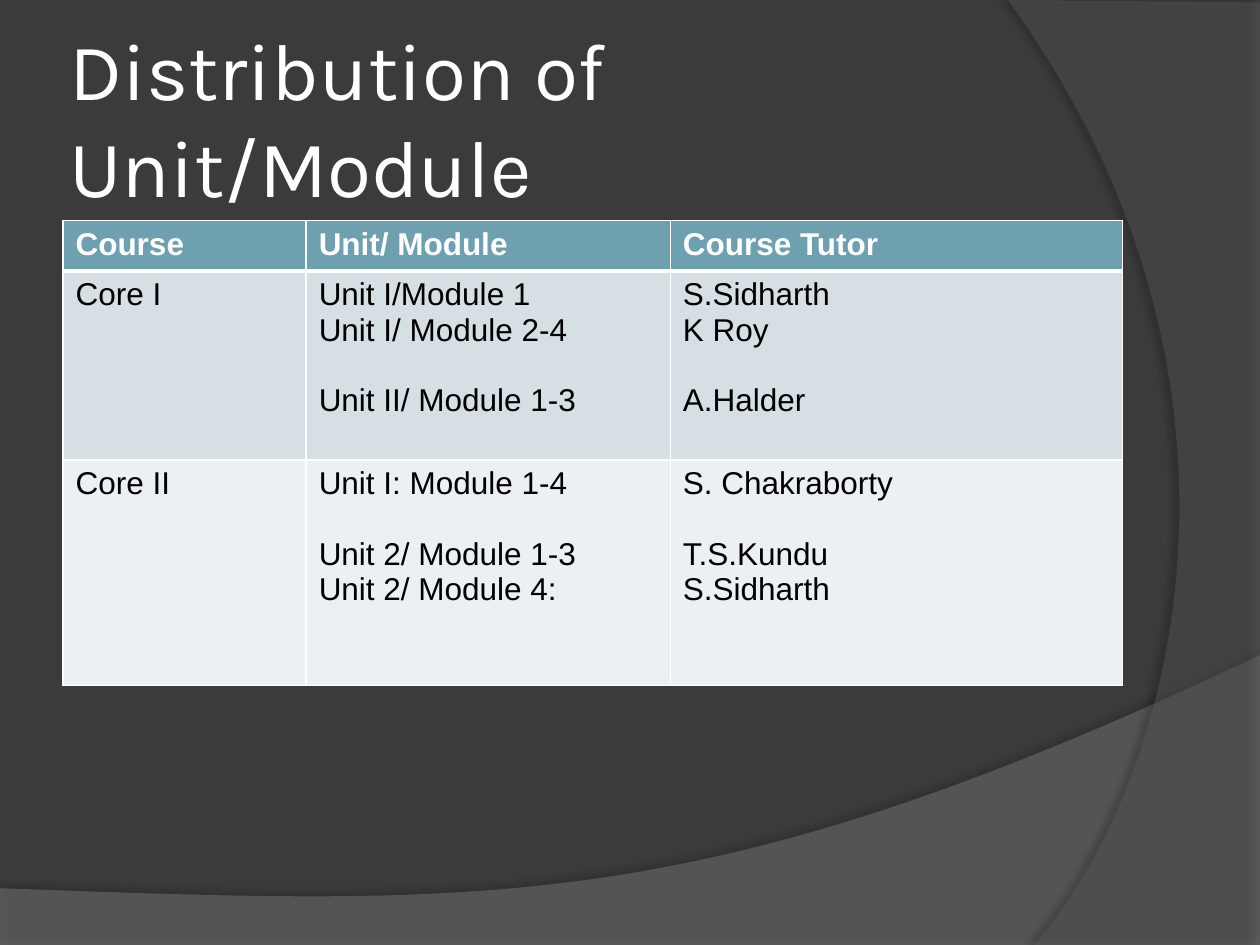
from lxml.etree import SubElement
from pptx import Presentation
from pptx.dml.color import RGBColor
from pptx.enum.text import MSO_ANCHOR
from pptx.oxml.ns import qn
from pptx.util import Inches, Pt

HEADS = ["Course", "Unit/ Module", "Course Tutor"]
# Each cell is a list of groups; a line of space parts the groups.
ROWS = [
    [[["Core I"]],
     [["Unit I/Module 1", "Unit I/ Module 2-4"], ["Unit II/ Module 1-3"]],
     [["S.Sidharth", "K Roy"], ["A.Halder"]]],
    [[["Core II"]],
     [["Unit I: Module 1-4"], ["Unit 2/ Module 1-3", "Unit 2/ Module 4:"]],
     [["S. Chakraborty"], ["T.S.Kundu", "S.Sidharth"]]],
]
HEAD = {"name": "Arial", "size": Pt(18), "bold": True, "color": "FFFFFF"}
BODY = HEAD | {"bold": False, "color": "000000"}
TITLE = {"name": "Karla", "size": Pt(46), "color": "FFFFFF"}


def rgb(code):
    return RGBColor.from_string(code)


def curve(*pts, steps=60):
    """Points along a cubic Bezier curve given by its four control points."""
    out = []
    for i in range(steps + 1):
        t = i / steps
        parts = ((1 - t) ** 3, 3 * t * (1 - t) ** 2, 3 * t * t * (1 - t), t ** 3)
        out.append(tuple(sum(w * p[k] for w, p in zip(parts, pts)) for k in (0, 1)))
    return out


def tint(node, code, alpha):
    color = SubElement(node, qn("a:srgbClr"), val=code)
    SubElement(color, qn("a:alpha"), val=str(alpha * 1000))


class Page:
    def __init__(self, deck, back):
        self.slide = deck.slides.add_slide(deck.slide_layouts[6])
        fill = self.slide.background.fill
        fill.solid()
        fill.fore_color.rgb = rgb(back)

    def style(self, run, form):
        for key, val in form.items():
            if key == "color":
                run.font.color.rgb = rgb(val)
            else:
                setattr(run.font, key, val)

    def wave(self, pts, code, alpha, shade, dist, angle):
        """Draw a translucent outline with a soft shadow."""
        pts = [(Inches(x), Inches(y)) for x, y in pts]
        pen = self.slide.shapes.build_freeform(*pts[0])
        pen.add_line_segments(pts[1:], close=True)
        shape = pen.convert_to_shape()
        shape.line.fill.background()
        shape.shadow.inherit = False
        shape.fill.solid()
        shape.fill.fore_color.rgb = rgb(code)
        props = shape.element.spPr
        color = props.find(qn("a:solidFill"))[0]
        SubElement(color, qn("a:alpha"), val=str(alpha * 1000))
        glow = SubElement(props.find(qn("a:effectLst")), qn("a:outerShdw"),
                          blurRad=str(Pt(4)), dist=str(Pt(dist)),
                          dir=str(angle * 60000), rotWithShape="0")
        tint(glow, "000000", shade)

    def title(self, text, left, top, width, height):
        box = self.slide.shapes.add_textbox(*map(Inches, (left, top, width, height)))
        form = {"word_wrap": True, "vertical_anchor": MSO_ANCHOR.MIDDLE,
                "margin_left": Inches(0.05), "margin_right": Inches(0.3),
                "margin_top": Inches(0.05), "margin_bottom": Inches(0.05)}
        for key, val in form.items():
            setattr(box.text_frame, key, val)
        run = box.text_frame.paragraphs[0].add_run()
        run.text = text
        self.style(run, TITLE)

    def edge(self, cell, side, width):
        props = cell._tc.get_or_add_tcPr()
        line = SubElement(props, qn("a:ln" + side), w=str(Pt(width)))
        fill = SubElement(line, qn("a:solidFill"))
        SubElement(fill, qn("a:srgbClr"), val="FFFFFF")

    def cell(self, cell, groups, form, code, top, base):
        for side, width in {"L": 1, "R": 1, "T": top, "B": base}.items():
            self.edge(cell, side, width)
        cell.fill.solid()
        cell.fill.fore_color.rgb = rgb(code)
        para = None
        for g, group in enumerate(groups):
            for i, text in enumerate(group):
                frame = cell.text_frame
                para = frame.add_paragraph() if para else frame.paragraphs[0]
                if g and not i:
                    para.space_before = Pt(20.2)
                run = para.add_run()
                run.text = text
                self.style(run, form)

    def table(self, left, top, cols, highs):
        rows = [[[[head]] for head in HEADS]] + ROWS
        area = map(Inches, (left, top, sum(cols), sum(highs)))
        grid = self.slide.shapes.add_table(len(rows), len(cols), *area).table
        for col, width in zip(grid.columns, cols):
            col.width = Inches(width)
        fills = ["6EA0B0", "D5DFE4", "EBF0F2"]
        for r, row in enumerate(rows):
            grid.rows[r].height = Inches(highs[r])
            for c, groups in enumerate(row):
                self.cell(grid.cell(r, c), groups, BODY if r else HEAD, fills[r],
                          3 if r == 1 else 1, 1 if r else 3)


def main():
    deck = Presentation()
    deck.slide_width, deck.slide_height = Inches(10), Inches(7.5)
    page = Page(deck, "3B3B3B")
    low = curve((10, 5.2), (5.59, 7.29), (3.91, 7.19), (0, 7.05))
    page.wave([(0, 7.5), (10, 7.5)] + low, "7F7F7F", 45, 35, 3.5, 270)
    side = curve((8.21, 7.5), (9.35, 6.19), (10.18, 3), (8, 0))
    page.wave([(10, 0.02), (10, 7.5)] + side, "5E5E5E", 40, 45, 4, 180)
    page.title("Distribution of Unit/Module", 0.5, 0.3, 8.17, 1.25)
    page.table(0.5, 1.75, [1.93, 2.89, 3.59], [0.4, 1.5, 1.79])
    deck.save("out.pptx")


if __name__ == "__main__":
    main()
